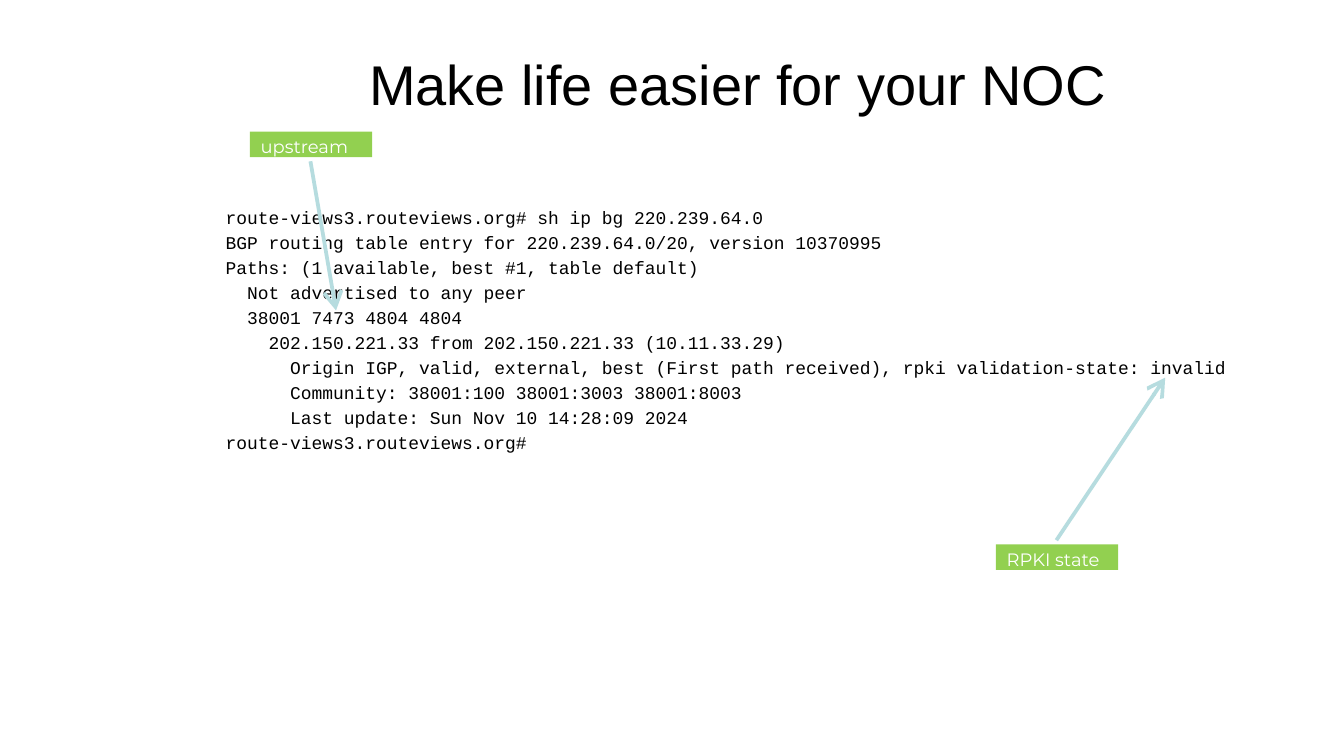
from lxml.etree import SubElement
from pptx import Presentation
from pptx.dml.color import RGBColor
from pptx.enum.shapes import MSO_CONNECTOR, MSO_SHAPE
from pptx.enum.text import MSO_ANCHOR, PP_ALIGN
from pptx.oxml.ns import qn
from pptx.util import Inches, Pt

BLACK = RGBColor(0x00, 0x00, 0x00)
WHITE = RGBColor(0xFF, 0xFF, 0xFF)
GREEN = RGBColor(0x92, 0xD0, 0x50)
PALE_TEAL = RGBColor(0xB6, 0xDC, 0xDF)

TITLE = "Make life easier for your NOC"
TERMINAL = [
    "route-views3.routeviews.org# sh ip bg 220.239.64.0",
    "BGP routing table entry for 220.239.64.0/20, version 10370995",
    "Paths: (1 available, best #1, table default)",
    "  Not advertised to any peer",
    "  38001 7473 4804 4804",
    "    202.150.221.33 from 202.150.221.33 (10.11.33.29)",
    "      Origin IGP, valid, external, best (First path received), "
    "rpki validation-state: invalid",
    "      Community: 38001:100 38001:3003 38001:8003",
    "      Last update: Sun Nov 10 14:28:09 2024",
    "route-views3.routeviews.org#",
]
# Label text, label left and top, arrow start and end, in inches
CALLOUTS = [
    ("RPKI state", (7.41, 4.05), (7.86, 4.02), (8.67, 2.81)),
    ("upstream", (1.86, 0.98), (2.31, 1.2), (2.5, 2.31)),
]
LABEL_WIDTH, LABEL_HEIGHT = 0.91, 0.19
SMALL = 9.6


def write(shape, lines, font, size, color, insets=(0, 0), align=PP_ALIGN.LEFT,
          anchor=MSO_ANCHOR.TOP, gap=0):
    frame = shape.text_frame
    frame.word_wrap = True
    frame.vertical_anchor = anchor
    frame.margin_left, frame.margin_top = map(Inches, insets)
    frame.margin_right = frame.margin_bottom = 0
    for number, line in enumerate(lines):
        para = frame.add_paragraph() if number else frame.paragraphs[0]
        para.text = line
        para.alignment = align
        para.space_before = Pt(gap if number else 0)
        para.font.name = font
        para.font.size = Pt(size)
        para.font.color.rgb = color


def add_label(page, text, corner):
    label = page.shapes.add_shape(
        MSO_SHAPE.RECTANGLE, *map(Inches, (*corner, LABEL_WIDTH, LABEL_HEIGHT)))
    label.shadow.inherit = False
    label.fill.solid()
    label.fill.fore_color.rgb = GREEN
    label.line.fill.background()
    write(label, [text], "Montserrat", SMALL, WHITE, insets=(0.08, 0.03))


def add_arrow(page, start, end):
    arrow = page.shapes.add_connector(
        MSO_CONNECTOR.STRAIGHT, *map(Inches, (*start, *end)))
    arrow.line.color.rgb = PALE_TEAL
    arrow.line.width = Pt(2)
    SubElement(arrow.line._get_or_add_ln(), qn("a:tailEnd"),
               type="arrow", w="lg", len="lg")
    SubElement(arrow._element.spPr, qn("a:effectLst"))


# Widescreen page, 16 to 9
deck = Presentation()
deck.slide_width = Inches(10)
deck.slide_height = deck.slide_width * 9 // 16
page = deck.slides.add_slide(deck.slide_layouts[6])

# Title, centred in the space right of its indent
title = page.shapes.add_textbox(*map(Inches, (0.5, 0.23, 9, 0.77)))
write(title, [TITLE], "Arial", 30, BLACK, insets=(0.98, 0.01),
      align=PP_ALIGN.CENTER, anchor=MSO_ANCHOR.MIDDLE)

# Terminal session
terminal = page.shapes.add_textbox(*map(Inches, (1.58, 1.54, 7.92, 3.27)))
write(terminal, TERMINAL, "Courier New", SMALL, BLACK, insets=(0.1, 0), gap=1.85)

# Labels with arrows into the session
for text, corner, start, end in CALLOUTS:
    add_label(page, text, corner)
    add_arrow(page, start, end)

deck.save("out.pptx")
